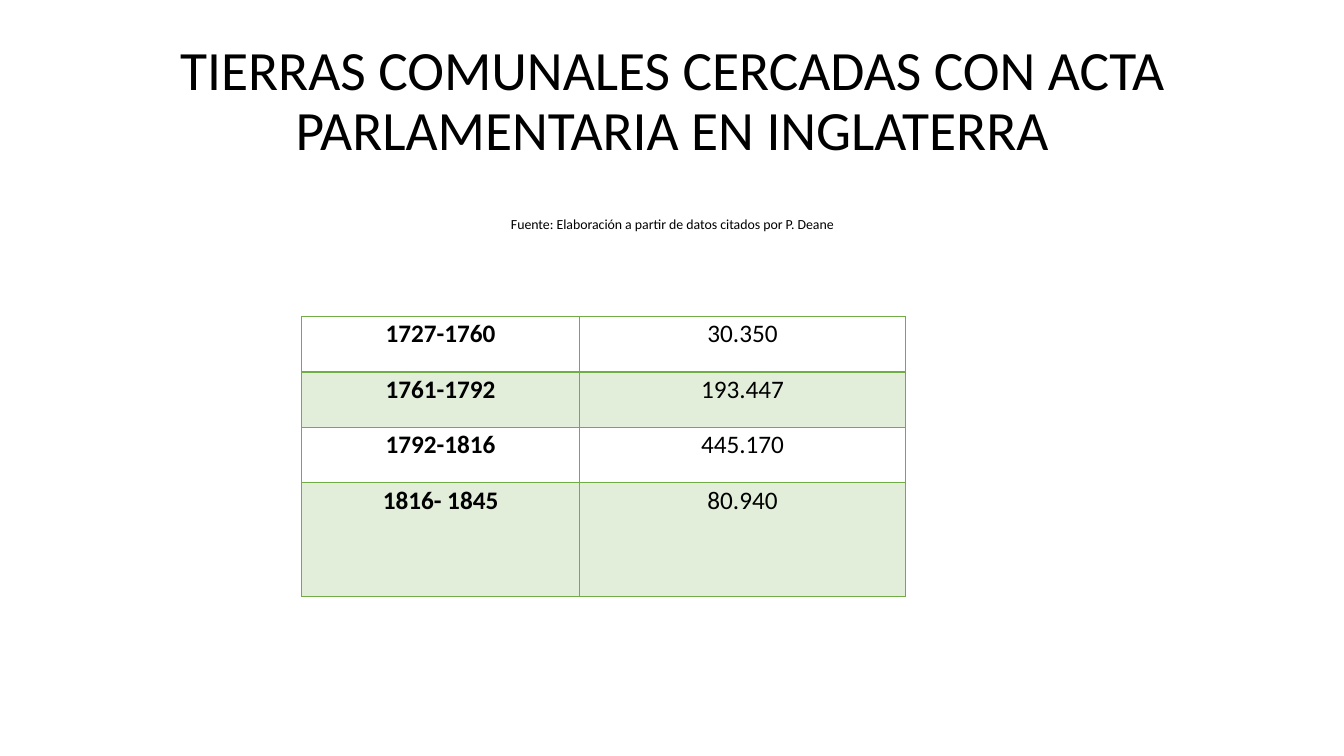
from lxml.etree import SubElement, Element
from pptx import Presentation
from pptx.dml.color import RGBColor
from pptx.enum.text import MSO_ANCHOR as Anchor, PP_ALIGN as Align
from pptx.oxml.ns import qn
from pptx.util import Inches, Pt

TITLE = "TIERRAS COMUNALES CERCADAS CON ACTA PARLAMENTARIA EN INGLATERRA"
SOURCE = "Fuente: Elaboración a partir de datos citados por P. Deane"
ROWS = [
    ("1727-1760", "30.350"),
    ("1761-1792", "193.447"),
    ("1792-1816", "445.170"),
    ("1816- 1845", "80.940"),
]
WIDTHS = [2.76, 3.23]
HEIGHTS = [0.55, 0.55, 0.55, 1.13]
GREEN = "70AD47"


def color(code):
    return RGBColor.from_string(code)


def write(para, text, size, bold, space):
    para.alignment = Align.CENTER
    para.line_spacing = space
    run = para.add_run()
    run.text = text
    font = run.font
    font.name = "Calibri"
    font.size = Pt(size)
    font.bold = bold
    font.color.rgb = color("000000")


def border(cell, sides):
    props = cell._tc.get_or_add_tcPr()
    for spot, (side, width) in enumerate(sides.items()):
        line = Element(qn("a:ln" + side), w=str(Pt(width)))
        fill = SubElement(line, qn("a:solidFill"))
        SubElement(fill, qn("a:srgbClr"), val=GREEN)
        props.insert(spot, line)


def shade(cell):
    cell.fill.solid()
    cell.fill.fore_color.rgb = color(GREEN)
    tint = cell._tc.tcPr.find(".//" + qn("a:srgbClr"))
    SubElement(tint, qn("a:alpha"), val="20000")


def add_title(slide):
    title = slide.shapes.title
    title.left, title.top = Inches(0.92), Inches(0.4)
    title.width, title.height = Inches(11.5), Inches(1.97)
    frame = title.text_frame
    frame.word_wrap = True
    frame.vertical_anchor = Anchor.MIDDLE
    frame.margin_bottom = Inches(0.09)
    write(frame.paragraphs[0], TITLE, 39.6, False, 0.9)
    note = frame.add_paragraph()
    note.space_before = Pt(39)
    write(note, SOURCE, 9.9, False, 0.9)


def add_grid(slide):
    table = slide.shapes.add_table(
        len(ROWS), len(WIDTHS), Inches(2.99), Inches(3.14),
        Inches(sum(WIDTHS)), Inches(sum(HEIGHTS))).table
    table.first_row = table.horz_banding = False
    for col, width in zip(table.columns, WIDTHS):
        col.width = Inches(width)
    for r, (texts, height) in enumerate(zip(ROWS, HEIGHTS)):
        table.rows[r].height = Inches(height)
        for c, text in enumerate(texts):
            cell = table.cell(r, c)
            cell.margin_left = cell.margin_right = Inches(0.07)
            cell.margin_top = cell.margin_bottom = 0
            write(cell.text_frame.paragraphs[0], text, 18, c == 0, 1.07)
            if r % 2:
                shade(cell)
            else:
                cell.fill.background()
            border(cell, {"L": 1, "R": 1, "T": 2 if r == 1 else 1,
                          "B": 2 if r == 0 else 1})


def main():
    deck = Presentation()
    deck.slide_width, deck.slide_height = Inches(13.33), Inches(7.5)
    slide = deck.slides.add_slide(deck.slide_layouts[5])
    add_title(slide)
    add_grid(slide)
    deck.save("out.pptx")


if __name__ == "__main__":
    main()
